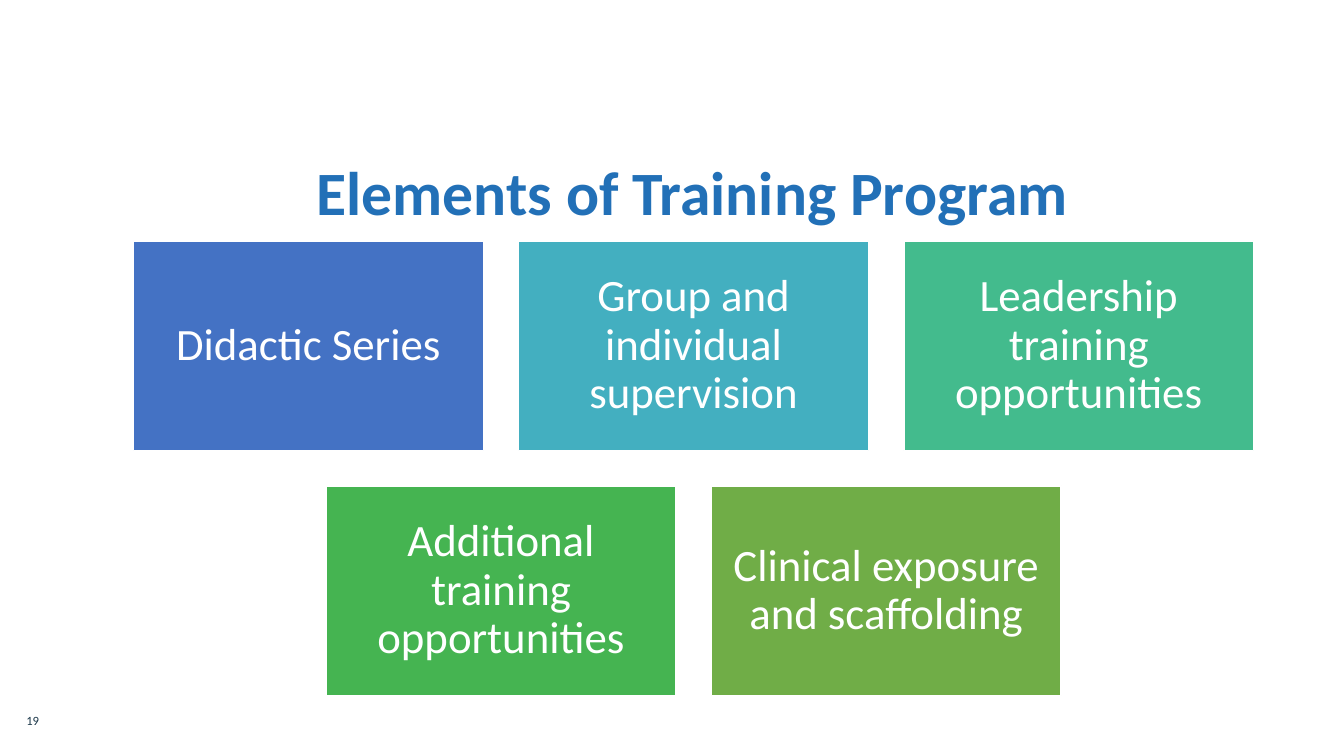
from dataclasses import dataclass

from pptx import Presentation
from pptx.dml.color import RGBColor
from pptx.enum.shapes import MSO_SHAPE
from pptx.enum.text import MSO_ANCHOR, PP_ALIGN
from pptx.slide import Slide
from pptx.text.text import TextFrame
from pptx.util import Inches, Pt


@dataclass(frozen=True)
class Theme:
    font: str = "Calibri"
    title_color: str = "2270B7"
    number_color: str = "1B3749"
    white: str = "FFFFFF"
    title_size: int = 44
    element_size: int = 32
    number_size: int = 9


@dataclass(frozen=True)
class Element:
    label: str
    color: str


THEME = Theme()
ELEMENT_ROWS = [
    [
        Element("Didactic Series", "4472C4"),
        Element("Group and individual supervision", "43AFC0"),
        Element("Leadership training opportunities", "43BB8D"),
    ],
    [
        Element("Additional training opportunities", "45B451"),
        Element("Clinical exposure and scaffolding", "70AD47"),
    ],
]
GRID_CENTER, GRID_TOP = 6.88, 2.39
CARD_WIDTH, CARD_HEIGHT, GAP = 3.47, 2.08, 0.35


def write_text(frame: TextFrame, text: str, size: int, color: str,
               bold: bool = False, line_spacing: float = 0.9,
               anchor: MSO_ANCHOR = MSO_ANCHOR.MIDDLE) -> None:
    frame.text = text
    frame.word_wrap = True
    frame.vertical_anchor = anchor
    paragraph = frame.paragraphs[0]
    paragraph.alignment = PP_ALIGN.CENTER
    paragraph.line_spacing = line_spacing
    font = paragraph.runs[0].font
    font.name = THEME.font
    font.size = Pt(size)
    font.bold = bold
    font.color.rgb = RGBColor.from_string(color)


def add_title(slide: Slide, text: str) -> None:
    title = slide.shapes.add_textbox(Inches(1.12), Inches(1.58), Inches(11.5), Inches(0.72))
    write_text(title.text_frame, text, THEME.title_size, THEME.title_color, bold=True)


def add_slide_number(slide: Slide, number: str) -> None:
    box = slide.shapes.add_textbox(Inches(0.16), Inches(7.02), Inches(0.33), Inches(0.25))
    box.text_frame.margin_left = box.text_frame.margin_right = 0
    write_text(box.text_frame, number, THEME.number_size, THEME.number_color,
               line_spacing=1.0, anchor=MSO_ANCHOR.BOTTOM)


def add_element(slide: Slide, element: Element, left: float, top: float) -> None:
    card = slide.shapes.add_shape(MSO_SHAPE.RECTANGLE, Inches(left), Inches(top),
                                  Inches(CARD_WIDTH), Inches(CARD_HEIGHT))
    card.shadow.inherit = False
    card.fill.solid()
    card.fill.fore_color.rgb = RGBColor.from_string(element.color)
    card.line.color.rgb = RGBColor.from_string(THEME.white)
    card.line.width = Pt(1)
    frame = card.text_frame
    frame.margin_left = frame.margin_right = Inches(0.13)
    frame.margin_top = frame.margin_bottom = Inches(0.13)
    write_text(frame, element.label, THEME.element_size, THEME.white)


def add_element_grid(slide: Slide, rows: list[list[Element]]) -> None:
    """Place the cards row by row, each row centred on the same axis."""
    for row_index, row in enumerate(rows):
        row_width = len(row) * (CARD_WIDTH + GAP) - GAP
        row_left = GRID_CENTER - row_width / 2
        top = GRID_TOP + row_index * (CARD_HEIGHT + GAP)
        for column, element in enumerate(row):
            add_element(slide, element, row_left + column * (CARD_WIDTH + GAP), top)


def main() -> None:
    presentation = Presentation()
    presentation.slide_width = Inches(13.33)
    presentation.slide_height = Inches(7.5)
    slide = presentation.slides.add_slide(presentation.slide_layouts[6])
    add_title(slide, "Elements of Training Program")
    add_slide_number(slide, "19")
    add_element_grid(slide, ELEMENT_ROWS)
    presentation.save("out.pptx")


if __name__ == "__main__":
    main()
